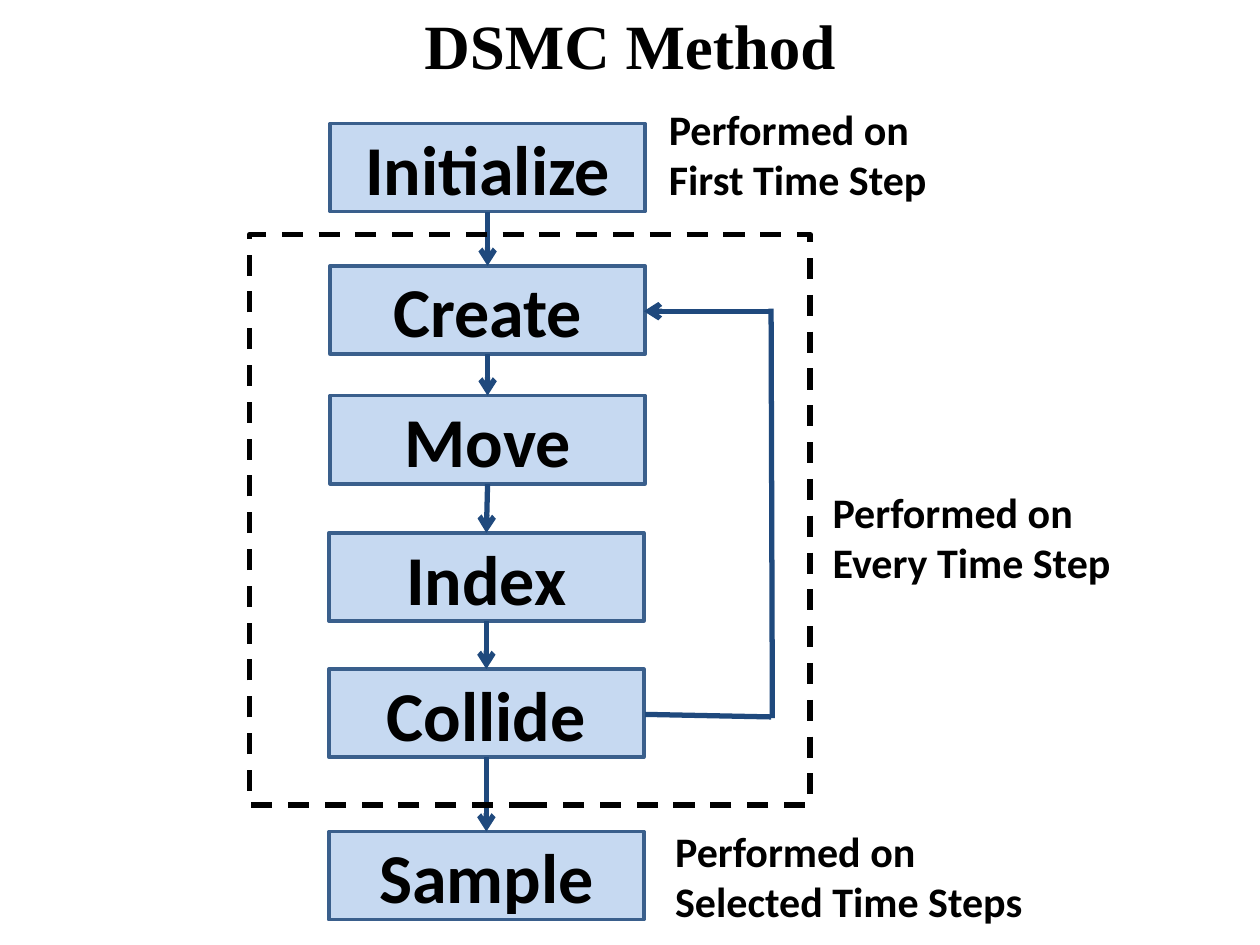
from pptx import Presentation
from pptx.dml.color import RGBColor
from pptx.enum.dml import MSO_LINE
from pptx.enum.shapes import MSO_CONNECTOR as CONN, MSO_SHAPE as SHAPE
from pptx.enum.text import MSO_ANCHOR as ANCHOR, PP_ALIGN as ALIGN
from pptx.oxml.ns import qn
from pptx.util import Pt
from lxml.etree import SubElement

PX = 9144


def color(value):
    return RGBColor.from_string(value)


def style(p, size, name="Calibri"):
    p.font.size = Pt(size)
    p.font.name = name
    p.font.bold = True
    p.font.color.rgb = color("000000")


prs = Presentation()
prs.slide_width, prs.slide_height = 1000 * PX, 750 * PX
s = prs.slides.add_slide(prs.slide_layouts[5])

title = s.shapes.title
title.left, title.top, title.width, title.height = 50 * PX, 0, 900 * PX, 71 * PX
title.text_frame.text = "DSMC Method"
p = title.text_frame.paragraphs[0]
p.alignment = ALIGN.CENTER
style(p, 36, "Times New Roman")

steps = [
    ("Initialize", 262, 98),
    ("Create", 262, 211),
    ("Move", 262, 314),
    ("Index", 261, 423),
    ("Collide", 261, 531),
    ("Sample", 261, 660),
]
for text, x, y in steps:
    sp = s.shapes.add_shape(SHAPE.RECTANGLE, x * PX, y * PX, 250 * PX, 70 * PX)
    sp.shadow.inherit = False
    sp.fill.solid()
    sp.fill.fore_color.rgb = color("C6D9F1")
    sp.line.color.rgb = color("3A5F8C")
    sp.line.width = Pt(2)
    tf = sp.text_frame
    tf.vertical_anchor = ANCHOR.MIDDLE
    tf.text = text
    p = tf.paragraphs[0]
    p.alignment = ALIGN.CENTER
    style(p, 40)

lines = [
    (x + 125, y + 70, next_x + 125, next_y, True)
    for (_, x, y), (_, next_x, next_y) in zip(steps, steps[1:])
]
lines += [
    (512, 567, 612, 569, False),
    (613, 570, 612, 245, False),
    (612, 247, 511, 247, True),
]
for x1, y1, x2, y2, arrow in lines:
    c = s.shapes.add_connector(CONN.STRAIGHT, x1 * PX, y1 * PX, x2 * PX, y2 * PX)
    c.line.color.rgb = color("1F497D")
    c.line.width = Pt(3)
    if arrow:
        SubElement(c.line._get_or_add_ln(), qn("a:tailEnd"), type="arrow")
    SubElement(c._element.spPr, qn("a:effectLst"))

loop = s.shapes.add_shape(SHAPE.RECTANGLE, 198 * PX, 186 * PX, 445 * PX, 453 * PX)
loop.shadow.inherit = False
loop.fill.background()
loop.line.color.rgb = color("000000")
loop.line.width = Pt(3)
loop.line.dash_style = MSO_LINE.DASH

notes = [
    ("First Time Step", 521, 77, 227),
    ("Every Time Step", 651, 381, 243),
    ("Selected Time Steps", 526, 650, 302),
]
for when, x, y, w in notes:
    tf = s.shapes.add_textbox(x * PX, y * PX, w * PX, 91 * PX).text_frame
    tf.word_wrap = False
    tf.text = f"Performed on\n{when}"
    for p in tf.paragraphs:
        style(p, 24)

prs.save("out.pptx")
